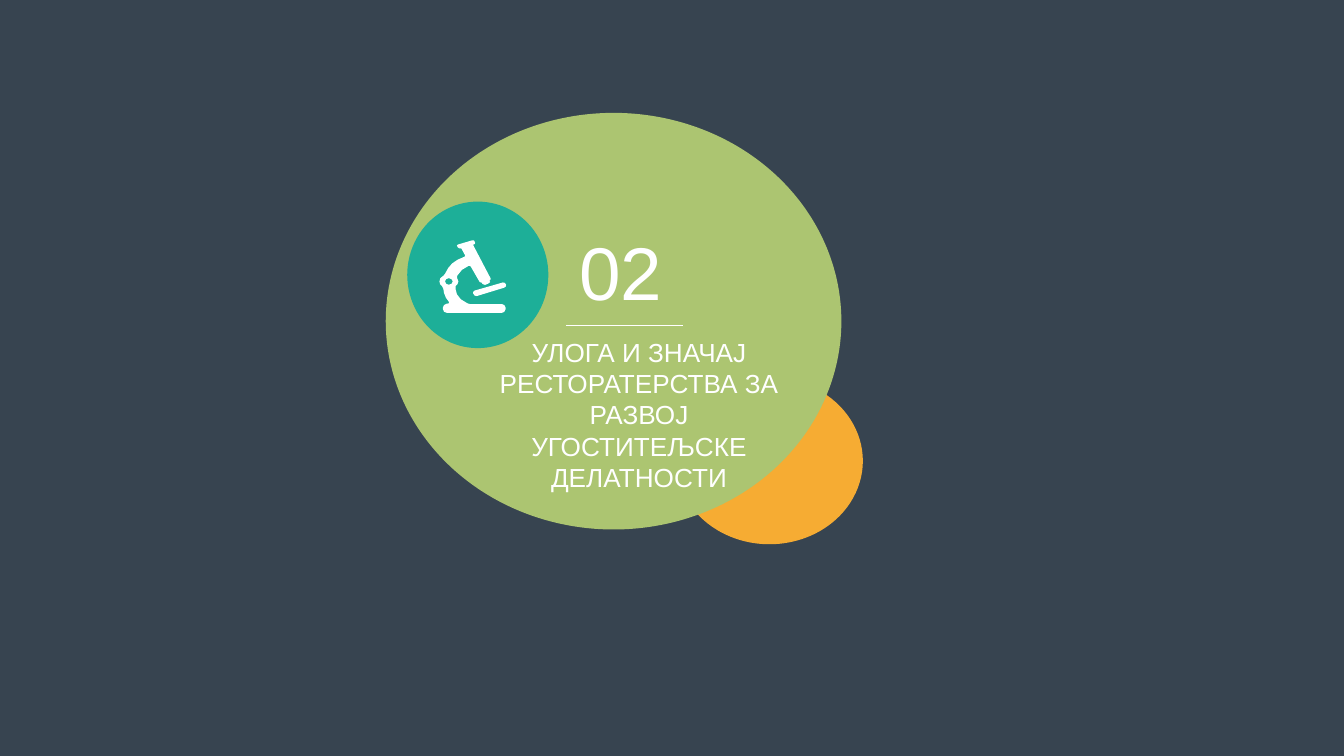
from typing import NamedTuple

from lxml import etree
from pptx import Presentation
from pptx.dml.color import RGBColor
from pptx.enum import shapes, text
from pptx.oxml import ns
from pptx.util import Inches, Pt

WHITE = RGBColor(0xFF, 0xFF, 0xFF)
NAVY = RGBColor(0x22, 0x30, 0x3D)
ORANGE = RGBColor(0xF6, 0xAC, 0x33)
GREEN = RGBColor(0xAC, 0xC5, 0x71)
TEAL = RGBColor(0x1D, 0xAF, 0x98)
FONT = "Arial"
UNITS_PER_INCH = 1000
SLIDE_WIDTH = 10
SLIDE_HEIGHT = SLIDE_WIDTH * 9 / 16


class Box(NamedTuple):
    left: float
    top: float
    width: float
    height: float

    def lengths(self):
        return [Inches(value) for value in self]


class Circle(NamedTuple):
    box: Box
    color: RGBColor


CIRCLES = [
    Circle(Box(5.03, 2.81, 1.39, 1.24), ORANGE),
    Circle(Box(2.87, 0.84, 3.39, 3.1), GREEN),
    Circle(Box(3.03, 1.5, 1.05, 1.09), TEAL),
]

MICROSCOPE_BODY = [
    (3325, 2260), (3340, 2257), (3342, 2248), (3318, 2215), (3304, 2180),
    (3299, 2148), (3290, 2130), (3275, 2114), (3270, 2094), (3277, 2070),
    (3298, 2053), (3310, 2040), (3335, 1995), (3365, 1960), (3405, 1933),
    (3458, 1910), (3462, 1902), (3434, 1850), (3417, 1848), (3406, 1840),
    (3400, 1826), (3407, 1820), (3515, 1788), (3528, 1790), (3536, 1808),
    (3533, 1815), (3520, 1822), (3650, 2070), (3650, 2080), (3642, 2090),
    (3648, 2098), (3634, 2110), (3610, 2120), (3592, 2114), (3582, 2102),
    (3570, 2100), (3502, 1982), (3490, 1977), (3438, 2008), (3402, 2052),
    (3402, 2070), (3411, 2094), (3405, 2115), (3390, 2130), (3390, 2150),
    (3400, 2190), (3430, 2228), (3480, 2258), (3500, 2263), (3735, 2263),
    (3753, 2270), (3762, 2288), (3762, 2302), (3753, 2320), (3735, 2328),
    (3325, 2328), (3305, 2320), (3296, 2302), (3296, 2288), (3305, 2269),
]
MICROSCOPE_LENS = [
    (3340, 2070), (3360, 2077), (3369, 2094), (3360, 2112),
    (3340, 2119), (3320, 2112), (3311, 2094), (3320, 2077),
]
MICROSCOPE_STAGE = [
    (3530, 2163), (3742, 2102), (3758, 2105), (3766, 2120), (3763, 2133),
    (3752, 2141), (3548, 2203), (3532, 2200), (3521, 2184), (3521, 2172),
]


def fill_shape(shape, color: RGBColor) -> None:
    shape.shadow.inherit = False
    shape.fill.solid()
    shape.fill.fore_color.rgb = color
    shape.line.fill.background()


def add_backdrop(slide, box: Box, color: RGBColor, opacity: int) -> None:
    shape = slide.shapes.add_shape(shapes.MSO_SHAPE.RECTANGLE, *box.lengths())
    fill_shape(shape, color)
    color_element = shape.fill._xPr.find(".//" + ns.qn("a:srgbClr"))
    etree.SubElement(color_element, ns.qn("a:alpha"), val=str(opacity * 1000))


def add_circle(slide, circle: Circle) -> None:
    shape = slide.shapes.add_shape(shapes.MSO_SHAPE.OVAL, *circle.box.lengths())
    fill_shape(shape, circle.color)


def add_text(slide, box: Box, content: str, *, size: int, align=text.PP_ALIGN.LEFT,
             wrap: bool = True, inset: tuple[float, float] = (0, 0)) -> None:
    frame = slide.shapes.add_textbox(*box.lengths()).text_frame
    frame.word_wrap = wrap
    frame.auto_size = text.MSO_AUTO_SIZE.SHAPE_TO_FIT_TEXT
    frame.margin_left = frame.margin_right = Inches(inset[0])
    frame.margin_top = frame.margin_bottom = Inches(inset[1])
    paragraph = frame.paragraphs[0]
    paragraph.alignment = align
    run = paragraph.add_run()
    run.text = content
    run.font.name = FONT
    run.font.size = Pt(size)
    run.font.color.rgb = WHITE


def add_divider(slide, left: float, right: float, top: float) -> None:
    line = slide.shapes.add_connector(
        shapes.MSO_CONNECTOR.STRAIGHT, Inches(left), Inches(top), Inches(right), Inches(top))
    line.line.color.rgb = WHITE
    line.line.width = Pt(0.5)
    etree.SubElement(line._element.spPr, ns.qn("a:effectLst"))


def add_icon(slide, contours: list[list[tuple[int, int]]], color: RGBColor) -> None:
    first, *others = contours
    builder = slide.shapes.build_freeform(*first[0], scale=Inches(1) / UNITS_PER_INCH)
    builder.add_line_segments(first[1:], close=True)
    for contour in others:
        builder.move_to(*contour[0])
        builder.add_line_segments(contour[1:], close=True)
    fill_shape(builder.convert_to_shape(), color)


def main() -> None:
    presentation = Presentation()
    presentation.slide_width = Inches(SLIDE_WIDTH)
    presentation.slide_height = Inches(SLIDE_HEIGHT)
    slide = presentation.slides.add_slide(presentation.slide_layouts[6])

    add_backdrop(slide, Box(0, 0, SLIDE_WIDTH, SLIDE_HEIGHT), NAVY, opacity=90)
    for circle in CIRCLES:
        add_circle(slide, circle)
    add_text(slide, Box(3.66, 2.5, 2.19, 1.18),
             "УЛОГА И ЗНАЧАЈ РЕСТОРАТЕРСТВА ЗА РАЗВОЈ УГОСТИТЕЉСКЕ ДЕЛАТНОСТИ",
             size=14, align=text.PP_ALIGN.CENTER)
    add_text(slide, Box(4.21, 1.63, 0.82, 0.77), "02", size=40, wrap=False, inset=(0.1, 0.05))
    add_divider(slide, 4.21, 5.08, 2.42)
    add_icon(slide, [MICROSCOPE_BODY, MICROSCOPE_LENS, MICROSCOPE_STAGE], WHITE)
    presentation.save("out.pptx")


if __name__ == "__main__":
    main()
